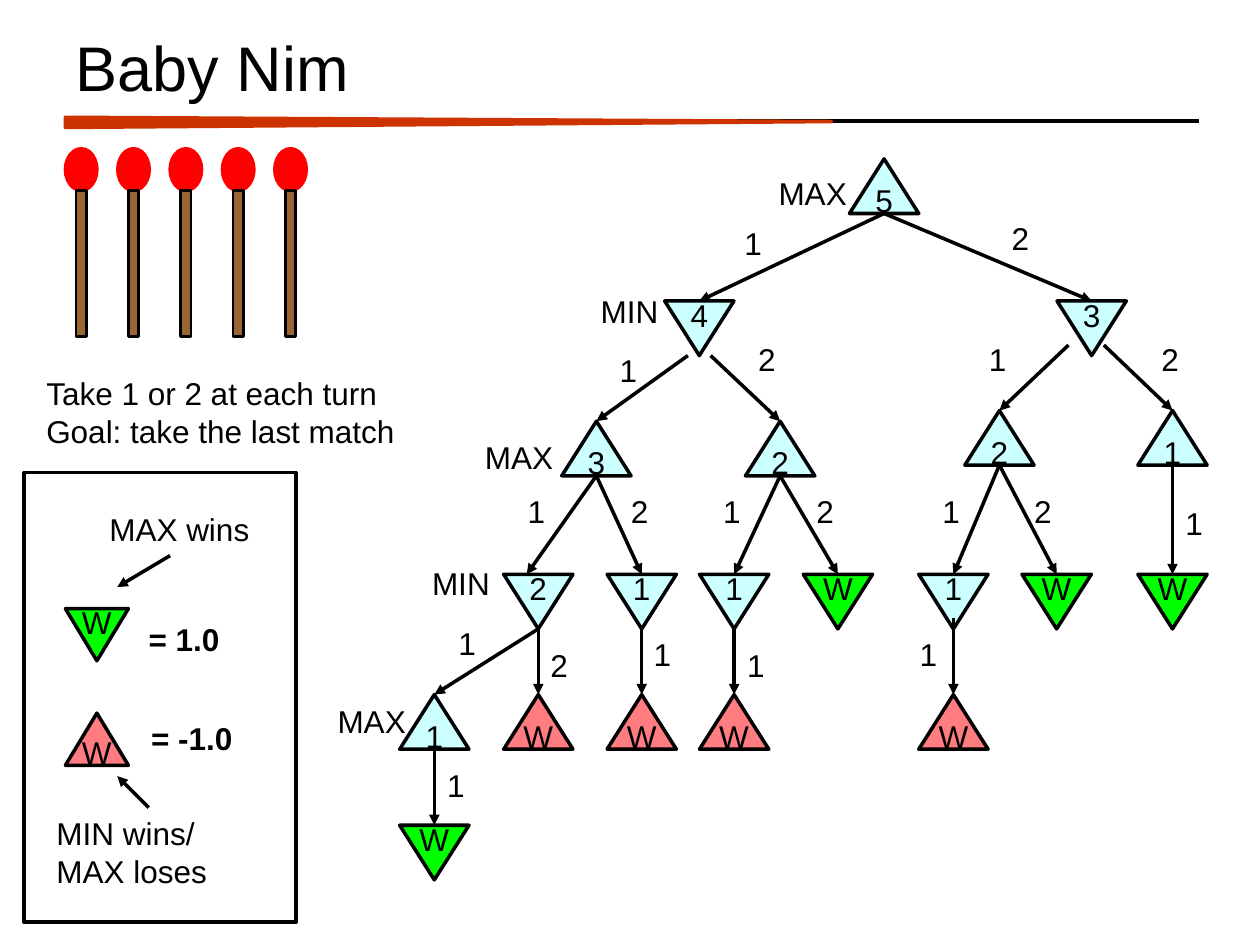
from dataclasses import dataclass

from pptx import Presentation
from pptx.dml.color import RGBColor
from pptx.enum.shapes import MSO_CONNECTOR, MSO_SHAPE
from pptx.enum.text import MSO_ANCHOR, MSO_AUTO_SIZE, PP_ALIGN
from pptx.oxml.ns import qn
from pptx.util import Pt
from lxml.etree import SubElement


@dataclass(frozen=True)
class Theme:
    """Colours, font and sizes of the slide."""
    font: str = "Arial"
    head: int = 36
    body: int = 18
    line: float = 2
    thin: float = 1.5
    ink: str = "000000"
    rule: str = "CC3300"
    flame: str = "FF0000"
    wood: str = "996633"
    open: str = "CCFFFF"
    win: str = "00FF00"
    loss: str = "FF7C80"


THEME = Theme()
MATCHES = 5
NODE = (39.6, 31.2)

# Each key lists the moves made so far; values are centre x, top, label x, label y.
TREE = {
    "": (505.2, 90.8, None, None),
    "1": (399.6, 172, 418.3, 124.6),
    "2": (623.8, 172, 571, 121.7),
    "11": (340.8, 240.7, 347, 197.3),
    "12": (445.8, 240.7, 426.2, 190.8),
    "21": (571.1, 234.6, 558, 190.8),
    "22": (670, 234.6, 656.6, 190.8),
    "111": (307.6, 328.2, 294.5, 277.9),
    "112": (366.7, 328.2, 353.5, 277.9),
    "121": (419.5, 328.2, 406.1, 277.9),
    "122": (478.8, 328.2, 459.4, 277.9),
    "211": (544.8, 328.2, 531.4, 277.9),
    "212": (603.8, 328.2, 583.9, 277.9),
    "221": (670, 328.2, 670.3, 284.4),
    "1111": (248.2, 396.9, 254.9, 352.8),
    "1112": (307.6, 396.9, 307.4, 365.8),
    "1121": (366.7, 396.9, 366.5, 359.3),
    "1211": (419.5, 396.9, 419.8, 365.8),
    "2111": (544.8, 396.9, 518.4, 359.3),
    "11111": (248.2, 471.6, 248.4, 434.2),
}
# Shifts of an arrow: start x, start y, end x.
SHIFTS = {
    "11": (-6.5, 0, 0),
    "12": (6.5, 0, 0),
    "21": (-13.2, -6, 0),
    "22": (7, -6, 0),
    "111": (0, 0, -6.6),
    "2111": (0, -6.5, 0),
}
LEVELS = [("MAX", 437.8, 95.8), ("MIN", 336.2, 163.4), ("MAX", 270, 247),
          ("MIN", 239.8, 319), ("MAX", 185.8, 397.4)]
NOTES = [
    ("Take 1 or 2 at each turn\nGoal: take the last match", 19.4, 210.2, 213.8, False),
    ("= 1.0", 77.8, 350.6, 54.7, True),
    ("= -1.0", 79.2, 407.5, 61.2, True),
    ("MAX wins", 55.4, 288, 94.3, False),
    ("MIN wins/\nMAX loses", 25.2, 461.5, 100.8, False),
]


def put(obj, **vals):
    """Set each attribute of an object from named values."""
    for name, val in vals.items():
        setattr(obj, name, val)


def write(frame, text, size=THEME.body, bold=False, align=PP_ALIGN.LEFT, **vals):
    """Fill a text frame with styled lines."""
    frame.text = text
    put(frame, **{"word_wrap": False, **vals})
    for para in frame.paragraphs:
        para.alignment = align
        put(para.font, name=THEME.font, size=Pt(size), bold=bold)
        para.font.color.rgb = RGBColor.from_string(THEME.ink)


def stroke(line, tint=THEME.ink, width=THEME.line):
    """Give a line its colour and width."""
    line.color.rgb = RGBColor.from_string(tint)
    line.width = Pt(width)


def draw(shapes, kind, box, fill=None, tint=THEME.ink, width=THEME.line):
    """Add a flat preset shape."""
    shape = shapes.add_shape(kind, *map(Pt, box))
    shape.shadow.inherit = False
    if fill:
        shape.fill.solid()
        shape.fill.fore_color.rgb = RGBColor.from_string(fill)
    else:
        shape.fill.background()
    stroke(shape.line, tint, width)
    return shape


def link(shapes, start, end, arrow=True):
    """Add a straight line, with an arrowhead if asked."""
    line = shapes.add_connector(MSO_CONNECTOR.STRAIGHT, *map(Pt, (*start, *end)))
    stroke(line.line)
    if arrow:
        SubElement(line.line._get_or_add_ln(), qn("a:tailEnd"), type="triangle")
    SubElement(line._element.spPr, qn("a:effectLst"))


def label(shapes, text, left, top, width=24.5, bold=False):
    """Add a text box that fits its lines."""
    high = 28.8 + 21.6 * text.count("\n")
    box = shapes.add_textbox(*map(Pt, (left, top, width, high)))
    write(box.text_frame, text, bold=bold, auto_size=MSO_AUTO_SIZE.SHAPE_TO_FIT_TEXT)


def state(shapes, box, text, fill, down):
    """Add a game state triangle, pointing down for MIN."""
    shape = draw(shapes, MSO_SHAPE.ISOSCELES_TRIANGLE, box, fill)
    write(shape.text_frame, text, align=PP_ALIGN.CENTER,
          vertical_anchor=MSO_ANCHOR.MIDDLE)
    if down:
        shape._element.spPr.get_or_add_xfrm().set("flipV", "1")
        shape.text_frame._txBody.bodyPr.set("rot", "10800000")


def match(shapes, left):
    """Add one match as a group of stick and head."""
    group = shapes.add_group_shape().shapes
    draw(group, MSO_SHAPE.OVAL, (left, 85, 18, 23.8), THEME.flame, THEME.flame)
    draw(group, MSO_SHAPE.RECTANGLE, (left + 6.1, 108.7, 5.8, 83.5), THEME.wood,
         width=THEME.thin)


def tree(shapes):
    """Draw all states, then their moves."""
    wide, high = NODE
    for key, (x, y, *_) in TREE.items():
        left = MATCHES - sum(map(int, key))
        down = len(key) % 2 == 1
        done = THEME.win if down else THEME.loss
        state(shapes, (x - wide / 2, y, wide, high), str(left or "W"),
              THEME.open if left else done, down)
    for key, (x, y, *spot) in TREE.items():
        if key:
            from_x, from_y, *_ = TREE[key[:-1]]
            dx, dy, end = SHIFTS.get(key, (0, 0, 0))
            link(shapes, (from_x + dx, from_y + high + dy), (x + end, y))
            label(shapes, key[-1], *spot)


def header(shapes):
    """Draw the title and the rule beneath it."""
    link(shapes, (37.4, 69.3), (685.4, 69.3), arrow=False)
    wedge = draw(shapes, MSO_SHAPE.ISOSCELES_TRIANGLE, (253.4, -149, 5.8, 437.8),
                 THEME.rule, THEME.rule)
    wedge.rotation = 90
    wedge.adjustments[0] = 0.42
    title = shapes.title
    put(title, left=Pt(36), top=Pt(12.2), width=Pt(648), height=Pt(51.8))
    write(title.text_frame, "Baby Nim", THEME.head, word_wrap=True,
          auto_size=MSO_AUTO_SIZE.NONE, vertical_anchor=MSO_ANCHOR.MIDDLE)


def legend(shapes):
    """Draw the boxed key to the final states."""
    state(shapes, (37.4, 347.8, 36, 29.8), "W", THEME.win, True)
    state(shapes, (37.4, 407.5, 36, 29.8), "W", THEME.loss, False)
    link(shapes, (97.2, 317.5), (67, 335.5))
    link(shapes, (85, 461.5), (67, 443.5))
    draw(shapes, MSO_SHAPE.RECTANGLE, (13.7, 270, 155.5, 257))


def main():
    """Build the slide and save it."""
    deck = Presentation()
    put(deck, slide_width=Pt(720), slide_height=Pt(540))
    shapes = deck.slides.add_slide(deck.slide_layouts[5]).shapes
    header(shapes)
    for step in range(MATCHES):
        match(shapes, 37.4 + 29.9 * step)
    tree(shapes)
    legend(shapes)
    for note in NOTES:
        label(shapes, *note)
    for level in LEVELS:
        label(shapes, *level, width=54)
    deck.save("out.pptx")


if __name__ == "__main__":
    main()
